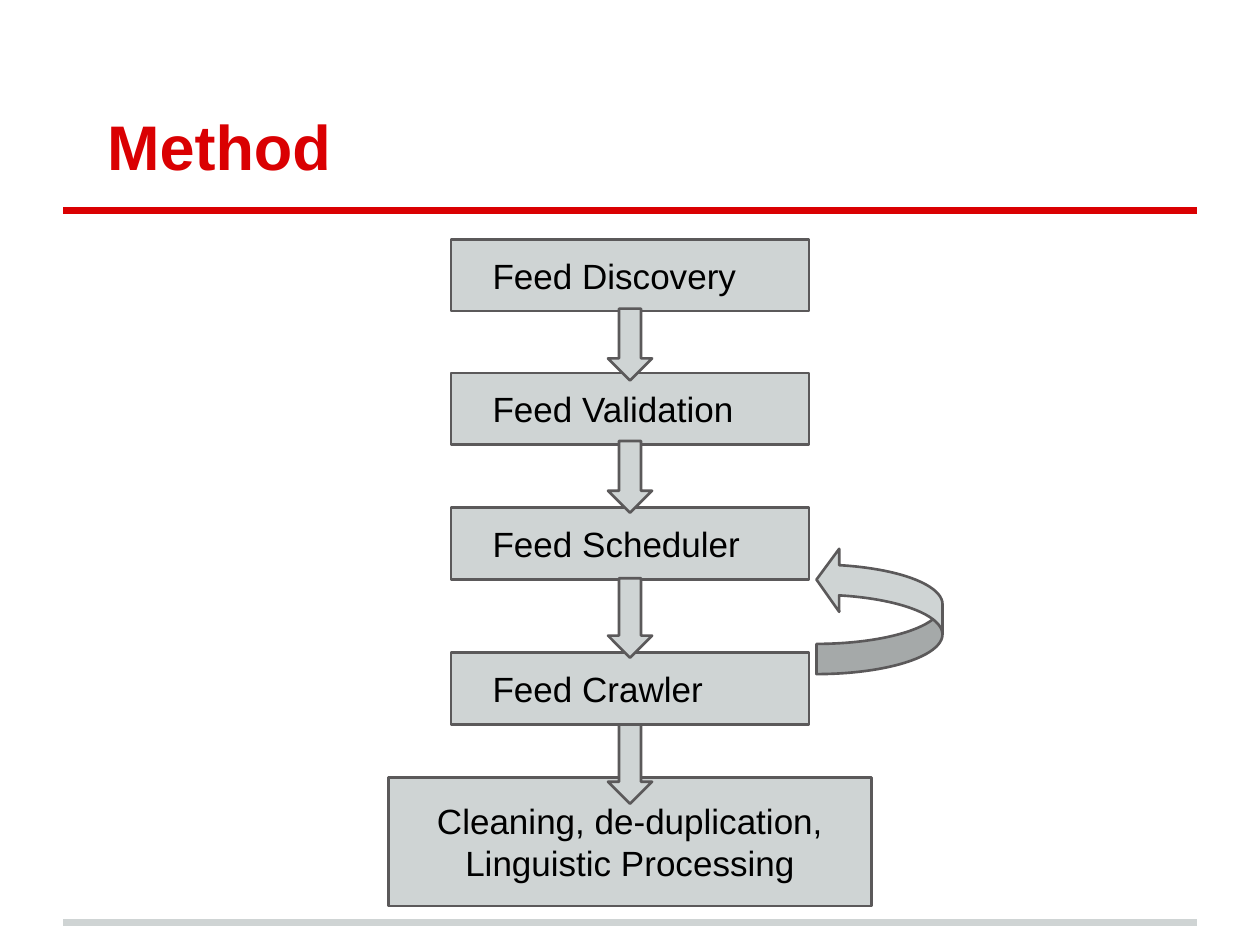
from pptx import Presentation
from pptx.dml.color import RGBColor
from pptx.enum.shapes import MSO_CONNECTOR as Connector, MSO_SHAPE as Shape
from pptx.enum.text import MSO_ANCHOR as Anchor, MSO_AUTO_SIZE as AutoSize, PP_ALIGN as Align
from pptx.oxml.ns import qn
from pptx.util import Inches, Pt
from lxml.etree import SubElement

# The slide is a grid of 100 columns by 75 rows of square cells
CELL = Inches(0.1)
COLUMNS, ROWS = 100, 75
COLORS = {"accent": "DA0002", "fill": "CFD4D4", "outline": "5B595A", "text": "000000"}
FONT = "Arial"

STEP_WIDTH, STEP_HEIGHT = 28.4, 5.7
STEPS = [("Feed Discovery", 19), ("Feed Validation", 29.6),
         ("Feed Scheduler", 40.3), ("Feed Crawler", 51.8)]
# Top row and height of each arrow between steps
ARROWS = [(24.5, 5.7), (35, 5.7), (45.9, 6.3), (57.5, 6.3)]


def cells(count):
    return round(count * CELL)


def color(name):
    return RGBColor.from_string(COLORS[name])


def write(shape, text, size=20, bold=False, color_name="text", align=Align.LEFT,
          anchor=Anchor.MIDDLE, indent=0.0):
    frame = shape.text_frame
    frame.word_wrap = True
    frame.auto_size = AutoSize.NONE
    frame.vertical_anchor = anchor
    frame.margin_left = cells(1 + indent)
    frame.margin_right = frame.margin_top = frame.margin_bottom = cells(1)
    paragraph = frame.paragraphs[0]
    paragraph.alignment = align
    run = paragraph.add_run()
    run.text = text
    run.font.name = FONT
    run.font.size = Pt(size)
    run.font.bold = bold
    run.font.color.rgb = color(color_name)


def add_rule(slide, row, color_name):
    line = slide.shapes.add_connector(
        Connector.STRAIGHT, cells(5), cells(row), cells(COLUMNS - 5), cells(row))
    line.line.color.rgb = color(color_name)
    line.line.width = Pt(4)
    SubElement(line._element.spPr, qn("a:effectLst"))


def add_block(slide, kind, left, top, width, height):
    shape = slide.shapes.add_shape(
        kind, cells(left), cells(top), cells(width), cells(height))
    shape.shadow.inherit = False
    shape.fill.solid()
    shape.fill.fore_color.rgb = color("fill")
    shape.line.color.rgb = color("outline")
    shape.line.width = Pt(1.5)
    return shape


def add_centered(slide, kind, top, width, height):
    return add_block(slide, kind, (COLUMNS - width) / 2, top, width, height)


def add_title(slide, text):
    title = slide.shapes.title
    title.left, title.top, title.width, title.height = map(cells, (5, 3, 90, 12.5))
    write(title, text, size=36, bold=True, color_name="accent",
          anchor=Anchor.BOTTOM, indent=2.5)


def add_loop_arrow(slide):
    arrow = add_block(slide, Shape.CURVED_RIGHT_ARROW, 64.8, 43.5, 10, 10)
    arrow.rotation = 180
    for index, value in enumerate((0.24, 0.5, 0.18)):
        arrow.adjustments[index] = value


def main():
    presentation = Presentation()
    presentation.slide_width = cells(COLUMNS)
    presentation.slide_height = cells(ROWS)
    slide = presentation.slides.add_slide(presentation.slide_layouts[5])

    # Rules and title
    add_rule(slide, 73.2, "fill")
    add_rule(slide, 16.7, "accent")
    add_title(slide, "Method")

    # Process steps
    for text, top in STEPS:
        step = add_centered(slide, Shape.FLOWCHART_PROCESS, top, STEP_WIDTH, STEP_HEIGHT)
        write(step, text, indent=2.3)
    result = add_centered(slide, Shape.FLOWCHART_PROCESS, 61.7, 38.3, 10.2)
    write(result, "Cleaning, de-duplication, Linguistic Processing", align=Align.CENTER)

    # Arrows down the flow, and the loop back to the scheduler
    for top, height in ARROWS:
        add_centered(slide, Shape.DOWN_ARROW, top, 3.5, height)
    add_loop_arrow(slide)

    presentation.save("out.pptx")


if __name__ == "__main__":
    main()
